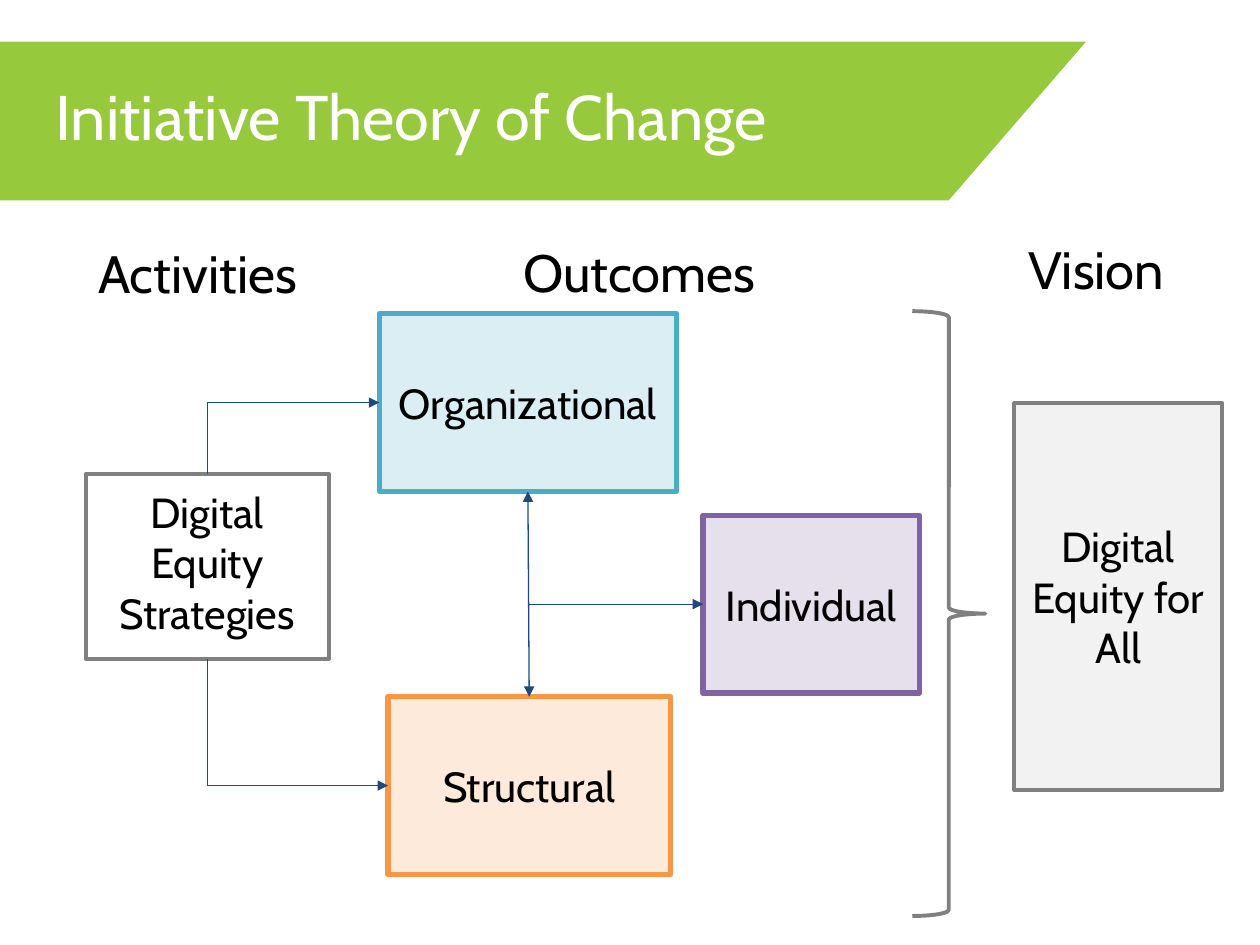
from lxml.etree import SubElement
from pptx import Presentation
from pptx.dml.color import RGBColor as Rgb
from pptx.enum.shapes import MSO_CONNECTOR as Link, MSO_SHAPE as Form
from pptx.enum.text import MSO_ANCHOR as Anchor, MSO_AUTO_SIZE as Fit, PP_ALIGN as Align
from pptx.oxml.ns import qn
from pptx.util import Inches, Pt

HUES = {
    "green": "97C93D", "white": "FFFFFF", "black": "000000", "gray": "808080",
    "pale": "F2F2F2", "navy": "1F497D", "orange": "F79646", "peach": "FDEADA",
    "teal": "4BACC6", "ice": "DBEEF4", "purple": "8064A2", "lilac": "E6E0EC",
}


class Board:
    """Style and current slide, measured on a grid of 100 columns by 75 rows."""

    font = "Cabin"
    inset = Inches(0.1)

    def __init__(self, deck):
        self.slide = deck.slides.add_slide(deck.slide_layouts[5])
        self.shapes = self.slide.shapes
        self.col = deck.slide_width / 100
        self.row = deck.slide_height / 75

    def hue(self, name):
        return Rgb.from_string(HUES[name])

    def area(self, x, y, w, h):
        return [round(n) for n in (x * self.col, y * self.row, w * self.col, h * self.row)]

    def label(self, shape, text, size, hue="black", align=Align.CENTER, anchor=Anchor.MIDDLE):
        frame = shape.text_frame
        frame.text = text
        frame.word_wrap = True
        frame.auto_size = Fit.NONE
        frame.vertical_anchor = anchor
        frame.margin_left = frame.margin_right = self.inset
        frame.margin_top = frame.margin_bottom = self.inset
        line = frame.paragraphs[0]
        line.alignment = align
        font = line.runs[0].font
        font.name, font.size = self.font, Pt(size)
        font.color.rgb = self.hue(hue)
        return line

    def title(self, text, area):
        shape = self.shapes.title
        shape.left, shape.top, shape.width, shape.height = self.area(*area)
        self.label(shape, text, 36, "white", Align.LEFT, Anchor.TOP).line_spacing = 0.9

    def banner(self, points, hue):
        spots = [(x * self.col, y * self.row) for x, y in points]
        draft = self.shapes.build_freeform(*spots[0])
        draft.add_line_segments(spots[1:], close=True)
        shape = draft.convert_to_shape()
        shape.shadow.inherit = False
        shape.fill.solid()
        shape.fill.fore_color.rgb = self.hue(hue)
        shape.line.fill.background()
        self.shapes.title.element.addprevious(shape.element)

    def shape(self, form, area, edge, width, fill=None):
        shape = self.shapes.add_shape(form, *self.area(*area))
        shape.shadow.inherit = False
        shape.line.color.rgb = self.hue(edge)
        shape.line.width = Pt(width)
        if fill:
            shape.fill.solid()
            shape.fill.fore_color.rgb = self.hue(fill)
        else:
            shape.fill.background()
        return shape

    def box(self, text, area, edge, width, fill=None, anchor=Anchor.MIDDLE):
        shape = self.shape(Form.RECTANGLE, area, edge, width, fill)
        self.label(shape, text, 24, anchor=anchor)
        return shape

    def head(self, text, area, align=Align.CENTER):
        self.label(self.shapes.add_textbox(*self.area(*area)), text, 30, align=align)

    def arrow(self, start, end, ends=("headEnd",), bent=False):
        kind = Link.ELBOW if bent else Link.STRAIGHT
        link = self.shapes.add_connector(kind, 0, 0, 0, 0)
        link.begin_connect(*start)
        if hasattr(end[0], "shape_id"):
            link.end_connect(*end)
        else:
            link.end_x, link.end_y = end
        link.line.color.rgb = self.hue("navy")
        link.line.width = Pt(0.75)
        props = link.element.spPr
        if bent:
            props.find(qn("a:prstGeom")).set("prst", "bentConnector2")
        for tag in ends:
            SubElement(props.find(qn("a:ln")), qn(f"a:{tag}"), type="triangle")
        SubElement(props, qn("a:effectLst"))


def main():
    deck = Presentation()
    deck.slide_width, deck.slide_height = Inches(10), Inches(7.5)
    board = Board(deck)
    board.banner([(0, 3.3), (86.2, 3.3), (75.3, 15.9), (0, 15.9)], "green")
    board.title("Initiative Theory of Change", (3.4, 5.8, 93.2, 6.5))

    plan = board.box("Digital Equity Strategies", (6.8, 37.6, 19.3, 14.7),
                     "gray", 2.25, anchor=Anchor.TOP)
    base = board.box("Structural", (30.8, 55.3, 22.4, 14.1), "orange", 3, "peach")
    group = board.box("Organizational", (30.1, 24.9, 23.6, 14.1), "teal", 3, "ice")
    person = board.box("Individual", (55.8, 40.9, 17.2, 14.1), "purple", 3, "lilac")
    board.box("Digital Equity for All", (80.5, 32, 16.5, 30.7), "gray", 2.25, "pale")

    board.arrow((group, 1), (plan, 0), bent=True)
    board.arrow((base, 1), (plan, 2), bent=True)
    board.arrow((group, 2), (base, 0), ("headEnd", "tailEnd"))
    middle = group.left + group.width // 2
    board.arrow((person, 1), (middle, person.top + person.height // 2))

    board.head("Outcomes", (29.2, 18, 43.1, 7.1))
    board.head("Vision", (76.7, 17.8, 20.6, 7.1))
    board.head("Activities", (6.8, 18.6, 18.5, 6), Align.LEFT)
    board.shape(Form.RIGHT_BRACE, (72.4, 24.7, 5.8, 48), "gray", 2.25)
    deck.save("out.pptx")


if __name__ == "__main__":
    main()
